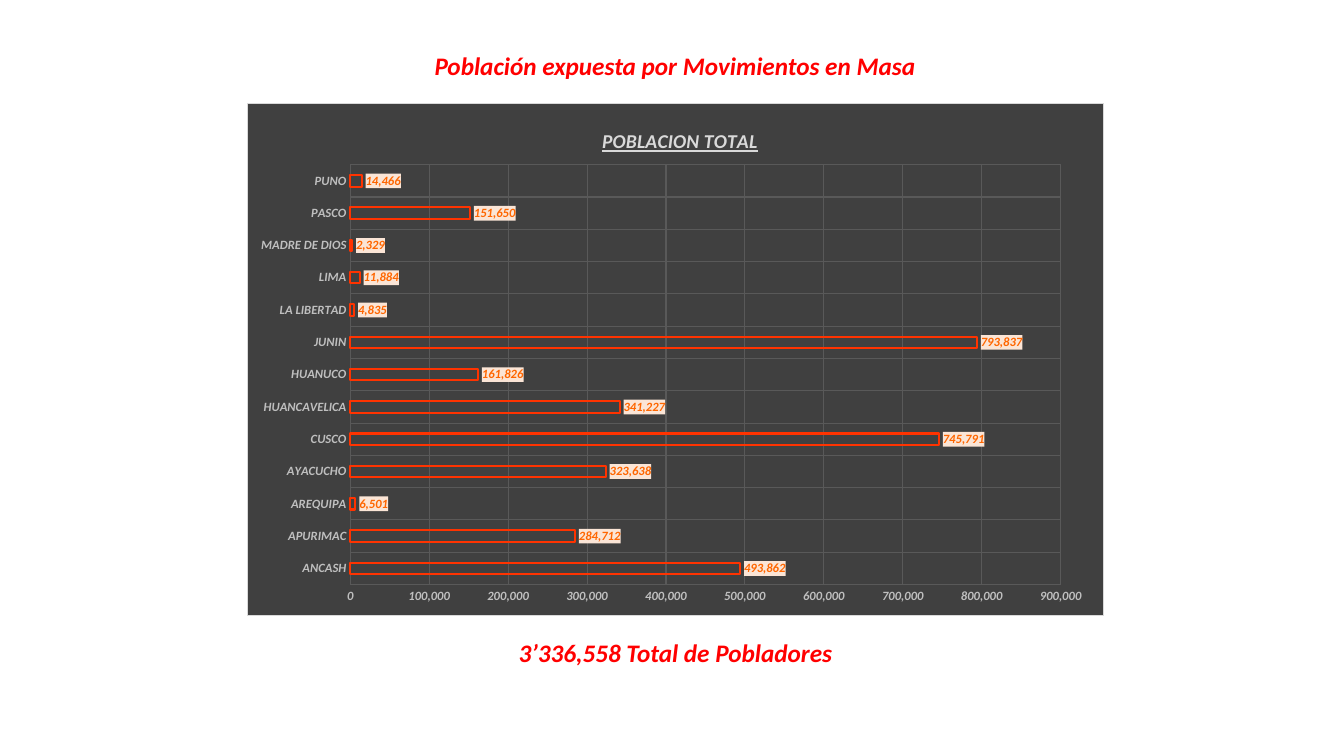
from lxml import etree
from pptx import Presentation
from pptx.chart.data import CategoryChartData
from pptx.dml.color import RGBColor
from pptx.enum import chart as chart_enum, text
from pptx.oxml import parse_xml
from pptx.oxml.ns import nsdecls, qn
from pptx.util import Inches, Pt


def style_font(font, size, color, italic=True):
    font.name = "Calibri"
    font.size = Pt(size)
    font.bold = True
    font.italic = italic
    font.color.rgb = RGBColor.from_string(color)


def make_layout(**settings):
    layout = etree.Element(qn("c:layout"))
    manual = etree.SubElement(layout, qn("c:manualLayout"))
    for name, value in settings.items():
        etree.SubElement(manual, qn(f"c:{name}")).set("val", str(value))
    return layout


presentation = Presentation()
presentation.slide_width = Inches(13.33)
presentation.slide_height = Inches(7.5)
slide = presentation.slides.add_slide(presentation.slide_layouts[5])

heading = slide.shapes.title
total = slide.shapes.add_textbox(0, 0, 0, 0)
captions = [
    (heading, "Población expuesta por Movimientos en Masa", 4.18, 0.45, 5.03, False),
    (total, "3’336,558 Total de Pobladores", 5.03, 6.27, 3.34, True),
]
for shape, wording, left, top, width, wrap in captions:
    shape.left, shape.top = Inches(left), Inches(top)
    shape.width, shape.height = Inches(width), Inches(0.4)
    frame = shape.text_frame
    frame.text = wording
    frame.word_wrap = wrap
    frame.auto_size = text.MSO_AUTO_SIZE.SHAPE_TO_FIT_TEXT
    frame.vertical_anchor = text.MSO_ANCHOR.TOP
    paragraph = frame.paragraphs[0]
    paragraph.alignment = text.PP_ALIGN.CENTER
    style_font(paragraph.runs[0].font, 18, "FF0000")

population = {
    "ANCASH": 493862,
    "APURIMAC": 284712,
    "AREQUIPA": 6501,
    "AYACUCHO": 323638,
    "CUSCO": 745791,
    "HUANCAVELICA": 341227,
    "HUANUCO": 161826,
    "JUNIN": 793837,
    "LA LIBERTAD": 4835,
    "LIMA": 11884,
    "MADRE DE DIOS": 2329,
    "PASCO": 151650,
    "PUNO": 14466,
}
chart_data = CategoryChartData(number_format="#,##0")
chart_data.categories = list(population)
chart_data.add_series("Series 1", list(population.values()))
chart = slide.shapes.add_chart(
    chart_enum.XL_CHART_TYPE.BAR_CLUSTERED,
    Inches(2.45), Inches(1.02), Inches(8.5), Inches(5.09), chart_data,
).chart
chart.has_legend = False
chart.font.name = "Calibri"
chart.font.size = Pt(10)

chart.has_title = True
title_frame = chart.chart_title.text_frame
title_frame.text = "POBLACION TOTAL"
title_font = title_frame.paragraphs[0].runs[0].font
style_font(title_font, 14, "D9D9D9")
title_font.underline = True
chart.chart_title.include_in_layout = False

for axis in (chart.category_axis, chart.value_axis):
    axis.major_tick_mark = chart_enum.XL_TICK_MARK.NONE
    axis.minor_tick_mark = chart_enum.XL_TICK_MARK.NONE
    axis.format.line.fill.background()
    axis.has_major_gridlines = True
    gridline = axis.major_gridlines.format.line
    gridline.color.rgb = RGBColor.from_string("595959")
    gridline.width = Pt(0.75)
    style_font(axis.tick_labels.font, 9, "BFBFBF")
chart.value_axis.minimum_scale = 0
chart.value_axis.maximum_scale = 900000
chart.value_axis.major_unit = 100000
chart.value_axis.tick_labels.number_format = "#,##0"
chart.value_axis.tick_labels.number_format_is_linked = False

plot = chart.plots[0]
plot.gap_width = 182
plot.overlap = -50
plot.vary_by_categories = False
series = plot.series[0]
series.format.fill.background()
series.format.line.color.rgb = RGBColor.from_string("FF3300")
series.format.line.width = Pt(1.5)

labels = series.data_labels
labels.show_value = True
labels.number_format = "#,##0"
labels.number_format_is_linked = False
labels.position = chart_enum.XL_LABEL_POSITION.OUTSIDE_END
style_font(labels.font, 9, "FF6600")

label_fill = parse_xml(
    f'<c:spPr {nsdecls("c", "a")}><a:solidFill><a:srgbClr val="FBE5D6"/></a:solidFill></c:spPr>'
)
labels.font._element.getparent()
series._element.find(qn("c:dLbls")).find(qn("c:txPr")).addprevious(label_fill)

chart_space = chart._chartSpace
chart_space.find(qn("c:chart")).addnext(parse_xml(
    f'<c:spPr {nsdecls("c", "a")}><a:solidFill><a:srgbClr val="404040"/></a:solidFill>'
    '<a:ln w="9525"><a:solidFill><a:srgbClr val="D9D9D9"/></a:solidFill></a:ln></c:spPr>'
))

plot_area = next(chart_space.iter(qn("c:plotArea")))
title = next(chart_space.iter(qn("c:title")))
for parent in (plot_area, title):
    for layout in parent.findall(qn("c:layout")):
        parent.remove(layout)
plot_area.insert(0, make_layout(
    layoutTarget="inner", xMode="edge", yMode="edge", x=0.12, y=0.12, w=0.83, h=0.82,
))
title.find(qn("c:tx")).addnext(make_layout(xMode="edge", yMode="edge", x=0.41, y=0.04))

presentation.save("out.pptx")
